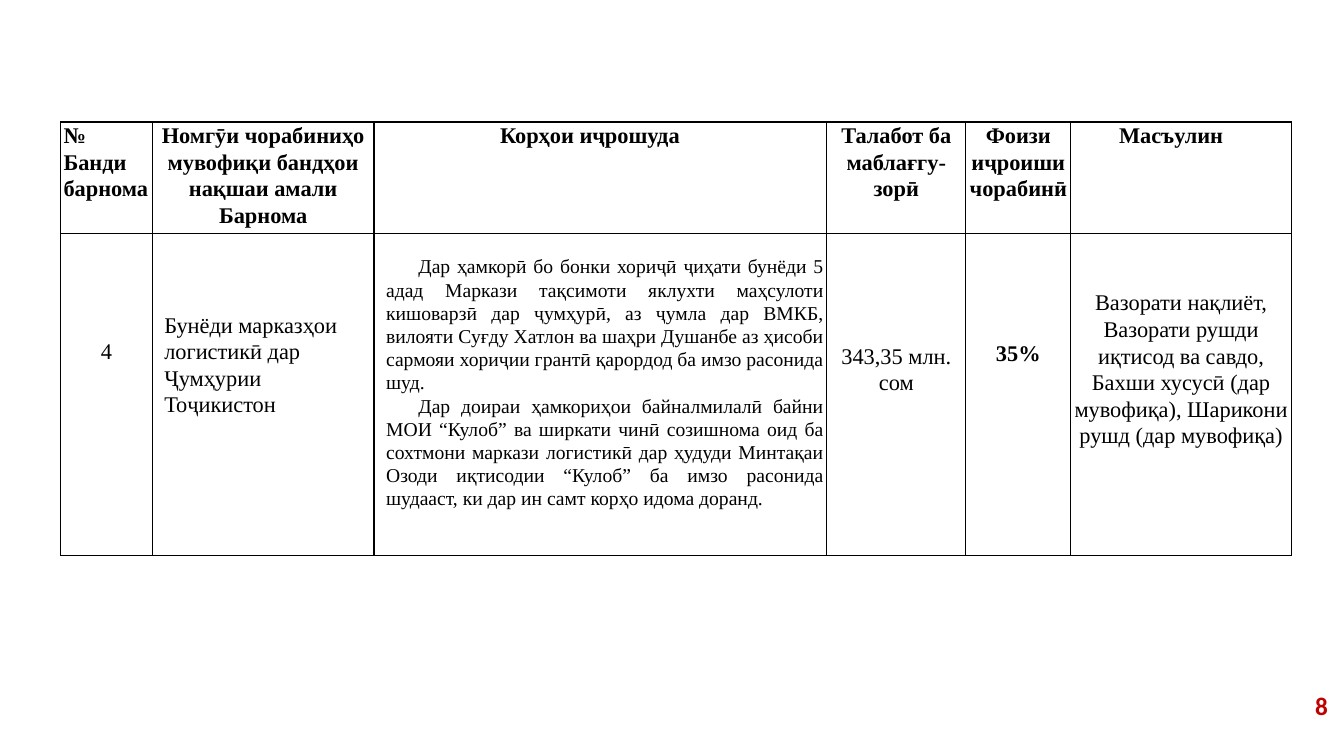
from pptx import Presentation
from pptx.dml.color import RGBColor
from pptx.enum.text import MSO_ANCHOR, PP_ALIGN as AL
from pptx.oxml.ns import qn
from pptx.util import Inches, Pt
from lxml.etree import SubElement

FONT = "Times New Roman"
COLS = [0.91, 2.2, 4.49, 1.38, 1.04, 2.19]
ROWS = [1.11, 3.19]

HEADER = [
    dict(paras=["№ ", "Банди барнома"], align=AL.JUSTIFY),
    dict(paras=["Номгӯи чорабиниҳо мувофиқи бандҳои нақшаи амали Барнома"]),
    dict(paras=["Корҳои иҷрошуда"], align=AL.JUSTIFY, left=1.25),
    dict(paras=["Талабот ба маблағгу-зорӣ"]),
    dict(paras=["Фоизи иҷроиши чорабинӣ"]),
    dict(paras=["Масъулин"], align=AL.JUSTIFY, left=0.48),
]
MEASURE = [
    dict(paras=["4"], top=1.03),
    dict(paras=["Бунёди марказҳои логистикӣ дар Ҷумҳурии Тоҷикистон"],
         align=AL.LEFT, left=0.12, top=0.77),
    dict(paras=[
        "Дар ҳамкорӣ бо бонки хориҷӣ ҷиҳати бунёди 5 адад Маркази тақсимоти "
        "яклухти маҳсулоти кишоварзӣ дар ҷумҳурӣ, аз ҷумла дар ВМКБ, вилояти "
        "Суғду Хатлон ва шаҳри Душанбе аз ҳисоби сармояи хориҷии грантӣ "
        "қарордод ба имзо расонида шуд.",
        "Дар доираи ҳамкориҳои байналмилалӣ байни МОИ “Кулоб” ва ширкати чинӣ "
        "созишнома оид ба сохтмони маркази логистикӣ дар ҳудуди Минтақаи Озоди "
        "иқтисодии “Кулоб” ба имзо расонида шудааст, ки дар ин самт корҳо "
        "идома доранд."],
        align=AL.JUSTIFY, left=0.12, top=0.21, size=14, indent=0.32),
    dict(paras=["343,35 млн. сом"], top=1.08),
    dict(paras=["35%"], top=1.05, bold=True),
    dict(paras=["Вазорати нақлиёт, Вазорати рушди иқтисод ва савдо, Бахши хусусӣ "
                "(дар мувофиқа), Шарикони рушд (дар мувофиқа)"], top=0.55),
]


def rgb(color):
    return RGBColor.from_string(color)


def add_run(p, text, size, color, bold, font):
    r = p.add_run()
    r.text = text
    f = r.font
    f.name, f.size, f.bold = font, Pt(size), bold
    f.color.rgb = rgb(color)


def set_borders(cell, color):
    tcPr = cell._tc.get_or_add_tcPr()
    for side in "LRTB":
        ln = SubElement(tcPr, qn(f"a:ln{side}"), w=str(Pt(1)))
        fill = SubElement(ln, qn("a:solidFill"))
        SubElement(fill, qn("a:srgbClr"), val=color)


def fill_cell(cell, paras, align=AL.CENTER, left=0.03, top=0, size=16,
              indent=0, bold=False):
    set_borders(cell, "000000")
    cell.fill.background()
    cell.vertical_anchor = MSO_ANCHOR.TOP
    cell.margin_left, cell.margin_right = Inches(left), Inches(0.03)
    cell.margin_top, cell.margin_bottom = Inches(top), 0
    tf = cell.text_frame
    for i, text in enumerate(paras):
        p = tf.paragraphs[0] if i == 0 else tf.add_paragraph()
        p.alignment = align
        p.line_spacing = 1.07
        if indent:
            p._p.get_or_add_pPr().set("indent", str(Inches(indent)))
        add_run(p, text, size, "000000", bold, FONT)


def add_measures(s, x, y, w, h):
    tbl = s.shapes.add_table(len(ROWS), len(COLS), Inches(x), Inches(y),
                             Inches(w), Inches(h)).table
    tbl.first_row = tbl.horz_banding = False
    for col, width in zip(tbl.columns, COLS):
        col.width = Inches(width * w / sum(COLS))
    for row, height in zip(tbl.rows, ROWS):
        row.height = Inches(height * h / sum(ROWS))
    for c, (head, body) in enumerate(zip(HEADER, MEASURE)):
        fill_cell(tbl.cell(0, c), bold=True, **head)
        fill_cell(tbl.cell(1, c), **body)


def add_page_number(s, x, y, w, h, number):
    sp = s.shapes.add_textbox(Inches(x), Inches(y), Inches(w), Inches(h))
    tf = sp.text_frame
    tf.word_wrap = True
    tf.margin_left = tf.margin_right = tf.margin_top = tf.margin_bottom = 0
    p = tf.paragraphs[0]
    p.alignment = AL.RIGHT
    add_run(p, number, 18, "C00000", True, "Calibri")


def main():
    prs = Presentation()
    prs.slide_width, prs.slide_height = Inches(13.33), Inches(7.5)
    s = prs.slides.add_slide(prs.slide_layouts[6])
    add_measures(s, 0.6, 1.21, 12.21, 4.3)
    add_page_number(s, 12.62, 6.85, 0.55, 0.3, "8")
    prs.save("out.pptx")


if __name__ == "__main__":
    main()
